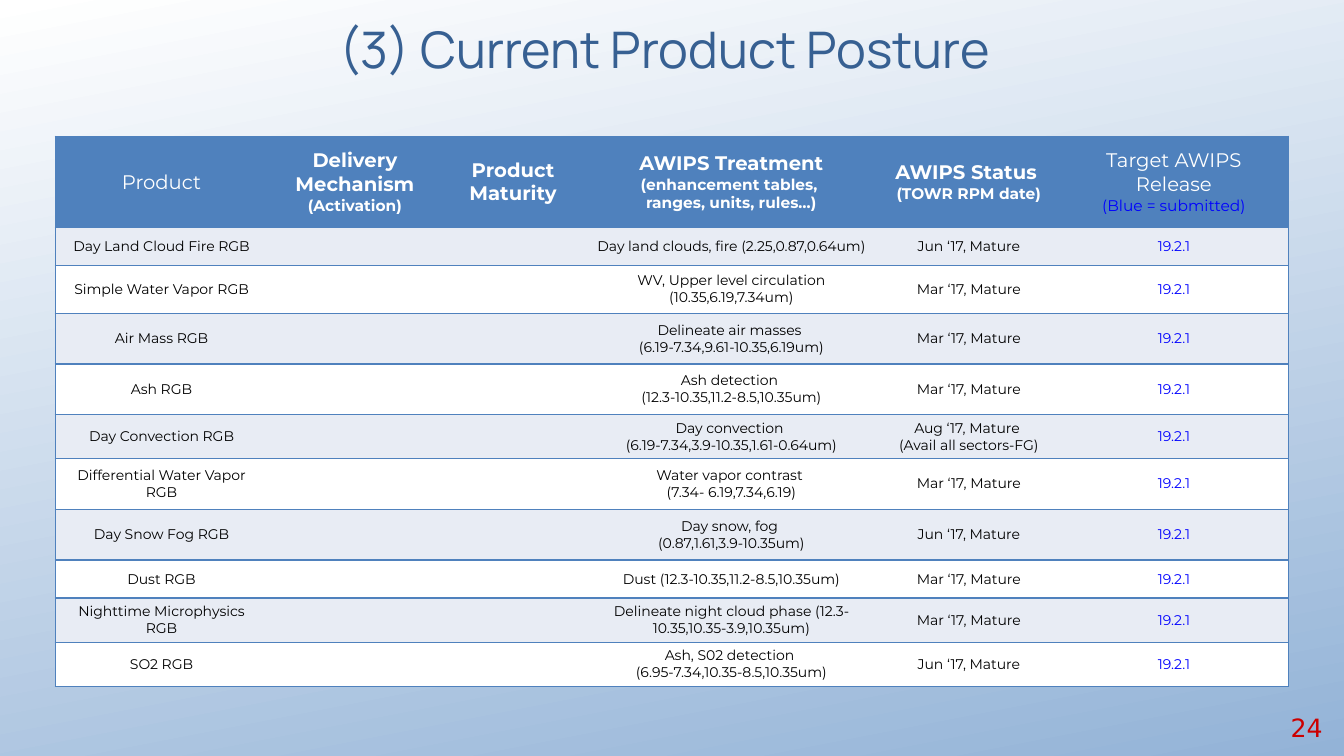
from dataclasses import dataclass

from lxml.etree import SubElement
from pptx import Presentation
from pptx.dml.color import RGBColor
from pptx.enum.text import MSO_ANCHOR, PP_ALIGN
from pptx.oxml.ns import qn
from pptx.slide import Slide
from pptx.table import Table, _Cell
from pptx.text.text import TextFrame, _Paragraph
from pptx.util import Cm, Pt

COLORS = {
    "sky": "93B3D7",
    "white": "FFFFFF",
    "header": "4F81BD",
    "band": "E8ECF4",
    "black": "000000",
    "submitted": "0000FF",
    "title": "376092",
    "number": "CC0000",
}
NO_STYLE = "{2D5ABB26-0587-4C30-8999-92F81FD0307C}"
BODY_SIZE = 10
COLUMN_WIDTHS = [5.36, 4.39, 3.58, 7.42, 4.55, 5.79]
HEADER_HEIGHT = 2.31


@dataclass
class Heading:
    label: str
    detail: str = ""
    bold: bool = True
    detail_color: str = "white"
    same_paragraph: bool = False


@dataclass
class Product:
    name: str
    treatment: str
    status: str
    height: float
    release: str = "19.2.1"


HEADINGS = [
    Heading("Product", bold=False),
    Heading("Delivery Mechanism", "(Activation)"),
    Heading("Product Maturity"),
    Heading("AWIPS Treatment ", "(enhancement tables, \nranges, units, rules…)", same_paragraph=True),
    Heading("AWIPS Status ", "(TOWR RPM date)"),
    Heading("Target AWIPS Release", "(Blue = submitted)", bold=False, detail_color="submitted"),
]
PRODUCTS = [
    Product("Day Land Cloud Fire RGB", "Day land clouds, fire (2.25,0.87,0.64um)", "Jun ‘17, Mature", 0.95),
    Product("Simple Water Vapor RGB", "WV, Upper level circulation (10.35,6.19,7.34um)", "Mar ‘17, Mature", 1.21),
    Product("Air Mass RGB", "Delineate air masses \n(6.19-7.34,9.61-10.35,6.19um)", "Mar ‘17, Mature", 1.27),
    Product("Ash RGB", "Ash detection \n(12.3-10.35,11.2-8.5,10.35um)", "Mar ‘17, Mature", 1.28),
    Product(
        "Day Convection RGB",
        "Day convection \n(6.19-7.34,3.9-10.35,1.61-0.64um)",
        "Aug ‘17, Mature \n(Avail all sectors-FG)",
        1.11,
    ),
    Product("Differential Water Vapor RGB", "Water vapor contrast \n(7.34- 6.19,7.34,6.19)", "Mar ‘17, Mature", 1.27),
    Product("Day Snow Fog RGB", "Day snow, fog \n(0.87,1.61,3.9-10.35um)", "Jun ‘17, Mature", 1.28),
    Product("Dust RGB", "Dust (12.3-10.35,11.2-8.5,10.35um)", "Mar ‘17, Mature", 0.96),
    Product(
        "Nighttime Microphysics RGB",
        "Delineate night cloud phase (12.3-10.35,10.35-3.9,10.35um)",
        "Mar ‘17, Mature",
        1.11,
    ),
    Product("SO2 RGB", "Ash, S02 detection \n(6.95-7.34,10.35-8.5,10.35um)", "Jun ‘17, Mature", 1.11),
]


def rgb(name: str) -> RGBColor:
    return RGBColor.from_string(COLORS[name])


def write(
    paragraph: _Paragraph,
    text: str,
    *,
    size: float,
    color: str,
    font: str = "Montserrat",
    bold: bool = False,
    align: PP_ALIGN = PP_ALIGN.CENTER,
) -> None:
    paragraph.alignment = align
    for index, line in enumerate(text.split("\n")):
        if index:
            paragraph.add_line_break()
        span = paragraph.add_run()
        span.text = line
        span.font.name = font
        span.font.size = Pt(size)
        span.font.bold = bold
        span.font.color.rgb = rgb(color)


def write_heading(frame: TextFrame, heading: Heading) -> None:
    paragraph = frame.paragraphs[0]
    write(paragraph, heading.label, size=14, color="white", bold=heading.bold)
    if heading.detail:
        if not heading.same_paragraph:
            paragraph = frame.add_paragraph()
        write(paragraph, heading.detail, size=11, color=heading.detail_color, bold=heading.bold)


def write_body(frame: TextFrame, text: str, color: str) -> None:
    if not text:
        SubElement(frame.paragraphs[0]._p, qn("a:endParaRPr"), sz=str(BODY_SIZE * 100))
        return
    for index, line in enumerate(text.split("\n")):
        paragraph = frame.add_paragraph() if index else frame.paragraphs[0]
        write(paragraph, line, size=BODY_SIZE, color=color)


def format_cell(cell: _Cell, fill: str, sides: str) -> None:
    cell.vertical_anchor = MSO_ANCHOR.MIDDLE
    properties = cell._tc.get_or_add_tcPr()
    for side in sides:
        line = SubElement(properties, qn(f"a:ln{side}"), w=str(Pt(1)))
        solid = SubElement(line, qn("a:solidFill"))
        SubElement(solid, qn("a:srgbClr"), val=COLORS["header"])
    cell.fill.solid()
    cell.fill.fore_color.rgb = rgb(fill)


def fill_table(table: Table) -> None:
    last = len(COLUMN_WIDTHS) - 1
    for column, width in zip(table.columns, COLUMN_WIDTHS):
        column.width = Cm(width)
    heights = [HEADER_HEIGHT] + [product.height for product in PRODUCTS]
    for row_index, height in enumerate(heights):
        table.rows[row_index].height = Cm(height)
        fill = "header" if row_index == 0 else "band" if row_index % 2 else "white"
        for column_index in range(last + 1):
            sides = {0: "LTB", last: "RTB"}.get(column_index, "TB")
            format_cell(table.cell(row_index, column_index), fill, sides)
    for column_index, heading in enumerate(HEADINGS):
        write_heading(table.cell(0, column_index).text_frame, heading)
    for row_index, product in enumerate(PRODUCTS, start=1):
        texts = [product.name, "", "", product.treatment, product.status, product.release]
        for column_index, text in enumerate(texts):
            color = "submitted" if column_index == last else "black"
            write_body(table.cell(row_index, column_index).text_frame, text, color)


def add_product_table(page: Slide) -> None:
    height = HEADER_HEIGHT + sum(product.height for product in PRODUCTS)
    frame = page.shapes.add_table(
        len(PRODUCTS) + 1, len(HEADINGS), Cm(1.39), Cm(3.43), Cm(sum(COLUMN_WIDTHS)), Cm(height)
    )
    table = frame.table
    table.first_row = False
    table.horz_banding = False
    table._tbl.tblPr.find(qn("a:tableStyleId")).text = NO_STYLE
    fill_table(table)


def paint_background(page: Slide) -> None:
    fill = page.background.fill
    fill.gradient()
    fill.gradient_angle = 101
    for stop, color in zip(fill.gradient_stops, ("sky", "white")):
        stop.color.rgb = rgb(color)


def add_title(page: Slide) -> None:
    title = page.shapes.title
    title.left, title.top, title.width, title.height = Cm(3.38), Cm(0), Cm(27), Cm(2.44)
    title.text_frame.vertical_anchor = MSO_ANCHOR.MIDDLE
    write(title.text_frame.paragraphs[0], "(3) Current Product Posture ", size=36, color="title", font="Manrope")


def add_page_number(page: Slide) -> None:
    box = page.shapes.add_textbox(Cm(32.03), Cm(17.83), Cm(1.55), Cm(1.02))
    box.text_frame.word_wrap = True
    box.text_frame.vertical_anchor = MSO_ANCHOR.MIDDLE
    write(
        box.text_frame.paragraphs[0], "24", size=18, color="number", font="DejaVu Sans", align=PP_ALIGN.RIGHT
    )


def main() -> None:
    deck = Presentation()
    deck.slide_width, deck.slide_height = Cm(33.87), Cm(19.05)
    page = deck.slides.add_slide(deck.slide_layouts[5])
    paint_background(page)
    add_product_table(page)
    add_page_number(page)
    add_title(page)
    deck.save("out.pptx")


if __name__ == "__main__":
    main()
